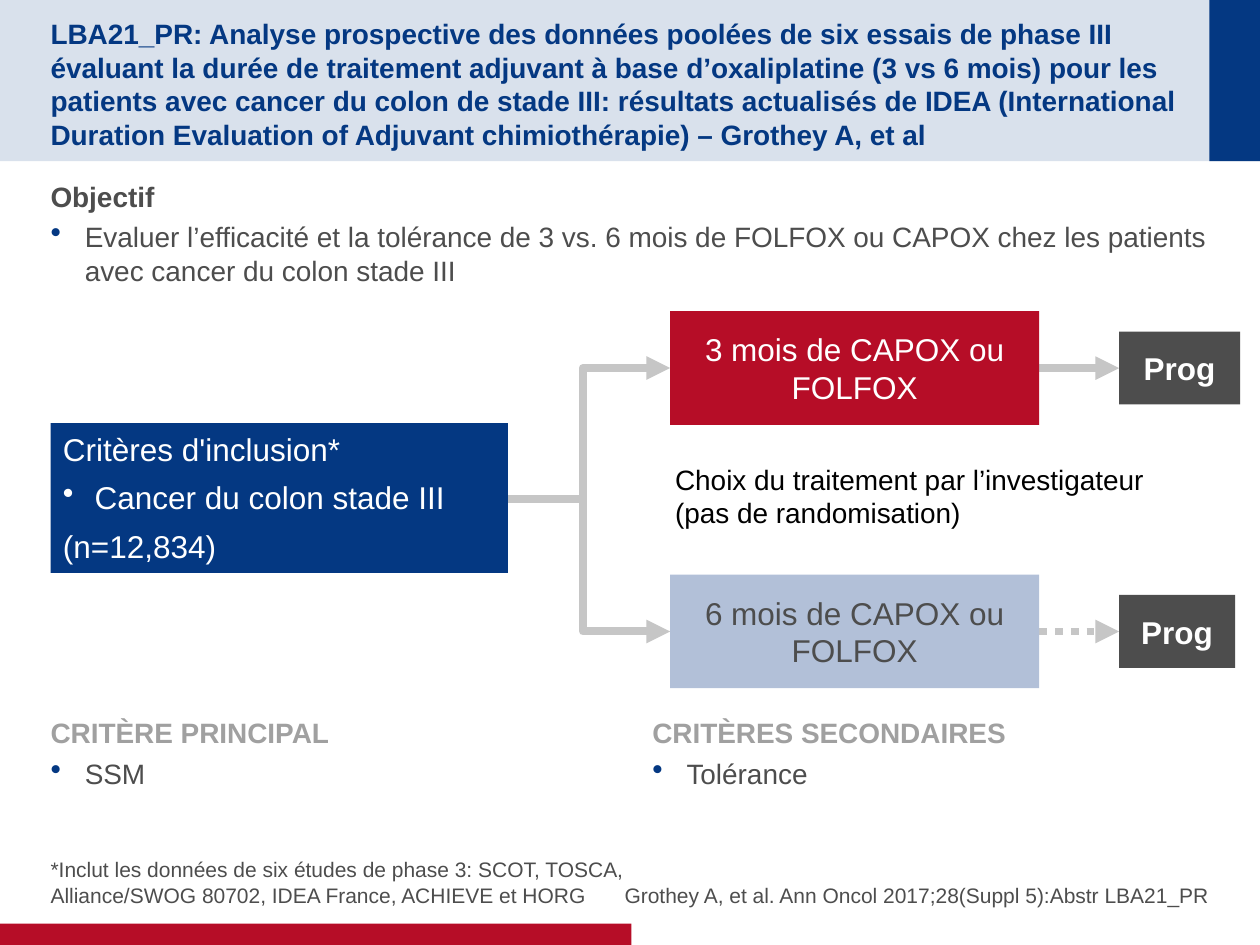
from lxml.etree import SubElement
from pptx import Presentation
from pptx.dml.color import RGBColor
from pptx.enum.dml import MSO_LINE
from pptx.enum.shapes import MSO_CONNECTOR, MSO_SHAPE
from pptx.enum.text import MSO_ANCHOR, PP_ALIGN
from pptx.oxml.ns import qn
from pptx.util import Cm, Pt

NAVY, RED, GREY = "043882", "B60D27", "4D4D4D"
PALE_BLUE, WHITE = "B2C0D8", "FFFFFF"
LEFT, TEXT_WIDTH = 1.02, 23.37


def paint(fill, colour):
    fill.solid()
    fill.fore_color.rgb = RGBColor.from_string(colour)


def write_text(shape, text, size=16, colour=GREY, bold=False, align=PP_ALIGN.LEFT,
               after=4, anchor=MSO_ANCHOR.TOP, inset=(0, 0.13), indent=0,
               bullet_colour=NAVY, bullet_size=110):
    """Add one paragraph; a positive indent makes it a bullet."""
    frame = shape.text_frame
    frame.word_wrap = True
    frame.vertical_anchor = anchor
    frame.margin_left = frame.margin_right = Cm(inset[0])
    frame.margin_top = frame.margin_bottom = Cm(inset[1])
    paragraph = frame.add_paragraph() if frame.text else frame.paragraphs[0]
    paragraph.alignment = align
    paragraph.space_after = Pt(after)
    run = paragraph.add_run()
    run.text = text
    run.font.name, run.font.size, run.font.bold = "Arial", Pt(size), bold
    paint(run.font.fill, colour)
    if indent:
        properties = paragraph._p.get_or_add_pPr()
        properties.set("marL", str(Cm(indent)))
        properties.set("indent", str(-Cm(indent)))
        SubElement(SubElement(properties, qn("a:buClr")), qn("a:srgbClr")).set("val", bullet_colour)
        SubElement(properties, qn("a:buSzPct")).set("val", str(bullet_size * 1000))
        SubElement(properties, qn("a:buChar")).set("char", "•")


deck = Presentation()
deck.slide_width, deck.slide_height = Cm(25.4), Cm(19.05)
shapes = deck.slides.add_slide(deck.slide_layouts[6]).shapes

# Flow geometry
SPLIT_X, SPLIT_Y = 11.75, 10.06
INCLUSION_WIDTH = 9.22
ARM_X, ARM_WIDTH, ARM_HEIGHT = 13.51, 7.44, 2.29
PROG_X, PROG_HEIGHT = 22.56, 1.47
arms = [
    (7.42, "3 mois de CAPOX ou FOLFOX", RED, WHITE, 2.44, MSO_LINE.SOLID),
    (12.73, "6 mois de CAPOX ou FOLFOX", PALE_BLUE, GREY, 2.34, MSO_LINE.ROUND_DOT),
]

# Connectors: stem, then a branch and an outcome arrow for each arm
links = [(MSO_CONNECTOR.STRAIGHT, LEFT + INCLUSION_WIDTH, SPLIT_Y, SPLIT_X, SPLIT_Y,
          MSO_LINE.SOLID, False)]
for middle, _, _, _, _, dash in arms:
    links += [
        (MSO_CONNECTOR.ELBOW, SPLIT_X, SPLIT_Y, ARM_X, middle, MSO_LINE.SOLID, True),
        (MSO_CONNECTOR.STRAIGHT, ARM_X + ARM_WIDTH, middle, PROG_X, middle, dash, True),
    ]
for kind, x1, y1, x2, y2, dash, arrow in links:
    link = shapes.add_connector(kind, Cm(x1), Cm(y1), Cm(x2), Cm(y2))
    link.line.width = Pt(4.5)
    paint(link.line.fill, "C6C6C6")
    if dash != MSO_LINE.SOLID:
        link.line.dash_style = dash
    if arrow:
        SubElement(link.line._get_or_add_ln(), qn("a:tailEnd")).set("type", "triangle")
    properties = link._element.spPr
    SubElement(properties, qn("a:effectLst"))
    if kind == MSO_CONNECTOR.ELBOW:  # turn right at the split point
        guide = SubElement(properties.find(qn("a:prstGeom")).get_or_add_avLst(), qn("a:gd"))
        guide.set("name", "adj1")
        guide.set("fmla", "val 0")

# Filled blocks: page bands, inclusion box, then arm and outcome pairs
blocks = [
    (0, 0, 25.4, 3.25, "D9E1EC"),
    (24.38, 0, 1.02, 3.25, NAVY),
    (0, 18.62, 12.73, 0.43, RED),
    (LEFT, 8.53, INCLUSION_WIDTH, 3.02, NAVY),
]
for middle, _, fill, _, prog_width, _ in arms:
    blocks += [
        (ARM_X, middle - ARM_HEIGHT / 2, ARM_WIDTH, ARM_HEIGHT, fill),
        (PROG_X, middle - PROG_HEIGHT / 2, prog_width, PROG_HEIGHT, GREY),
    ]
drawn = []
for x, y, width, height, fill in blocks:
    block = shapes.add_shape(MSO_SHAPE.RECTANGLE, Cm(x), Cm(y), Cm(width), Cm(height))
    block.shadow.inherit = False
    block.line.fill.background()
    paint(block.fill, fill)
    drawn.append(block)

# Inclusion criteria
inclusion = drawn[3]
for text, indent in [("Critères d'inclusion*", 0), ("Cancer du colon stade III", 0.64),
                     ("(n=12,834)", 0)]:
    write_text(inclusion, text, size=18, colour=WHITE, after=6.3, inset=(0.25, 0.13),
               indent=indent, bullet_colour=WHITE, bullet_size=100)

# Treatment arms and outcomes
centred = dict(size=18, align=PP_ALIGN.CENTER, anchor=MSO_ANCHOR.MIDDLE,
               inset=(0.25, 0), after=0)
for (_, treatment, _, colour, _, _), arm, prog in zip(arms, drawn[4::2], drawn[5::2]):
    write_text(arm, treatment, colour=colour, **centred)
    write_text(prog, "Prog", colour=WHITE, bold=True, **centred)

# Title
title = shapes.add_textbox(Cm(LEFT), Cm(0.57), Cm(TEXT_WIDTH), Cm(2.24))
write_text(title, "LBA21_PR: Analyse prospective des données poolées de six essais de phase III "
           "évaluant la durée de traitement adjuvant à base d’oxaliplatine (3 vs 6 mois) pour les "
           "patients avec cancer du colon de stade III: résultats actualisés de IDEA "
           "(International Duration Evaluation of Adjuvant chimiothérapie) – Grothey A, et al",
           colour=NAVY, bold=True, after=0, anchor=MSO_ANCHOR.MIDDLE, inset=(0, 0))

# Objective and endpoints: a heading over one bullet
sections = [
    (LEFT, 3.48, TEXT_WIDTH, 2.5, 0, "Objectif", GREY,
     "Evaluer l’efficacité et la tolérance de 3 vs. 6 mois de FOLFOX ou CAPOX "
     "chez les patients avec cancer du colon stade III"),
    (LEFT, 14.3, 11.48, 2.06, 0, "CRITÈRE PRINCIPAL", "A0A0A0", "SSM"),
    (12.9, 14.3, 11.48, 2.06, 0.25, "CRITÈRES SECONDAIRES", "A0A0A0", "Tolérance"),
]
for x, y, width, height, side, heading, colour, point in sections:
    section = shapes.add_textbox(Cm(x), Cm(y), Cm(width), Cm(height))
    write_text(section, heading, colour=colour, bold=True, inset=(side, 0.13))
    write_text(section, point, inset=(side, 0.13), indent=0.69)

# Note between the arms
choice = shapes.add_textbox(Cm(13.36), Cm(9.19), Cm(10.21), Cm(1.78))
write_text(choice, "Choix du traitement par l’investigateur (pas de randomisation)",
           colour="000000", inset=(0.25, 0.13))

# Footnote and reference
footers = [
    (LEFT, 11.89, PP_ALIGN.LEFT, "*Inclut les données de six études de phase 3: SCOT, TOSCA, "
     "Alliance/SWOG 80702, IDEA France, ACHIEVE et HORG"),
    (11.73, 12.65, PP_ALIGN.RIGHT, "Grothey A, et al. Ann Oncol 2017;28(Suppl 5):Abstr LBA21_PR"),
]
for x, width, align, text in footers:
    footer = shapes.add_textbox(Cm(x), Cm(16.94), Cm(width), Cm(1.35))
    write_text(footer, text, size=12, align=align, anchor=MSO_ANCHOR.BOTTOM, inset=(0, 0))

deck.save("out.pptx")
